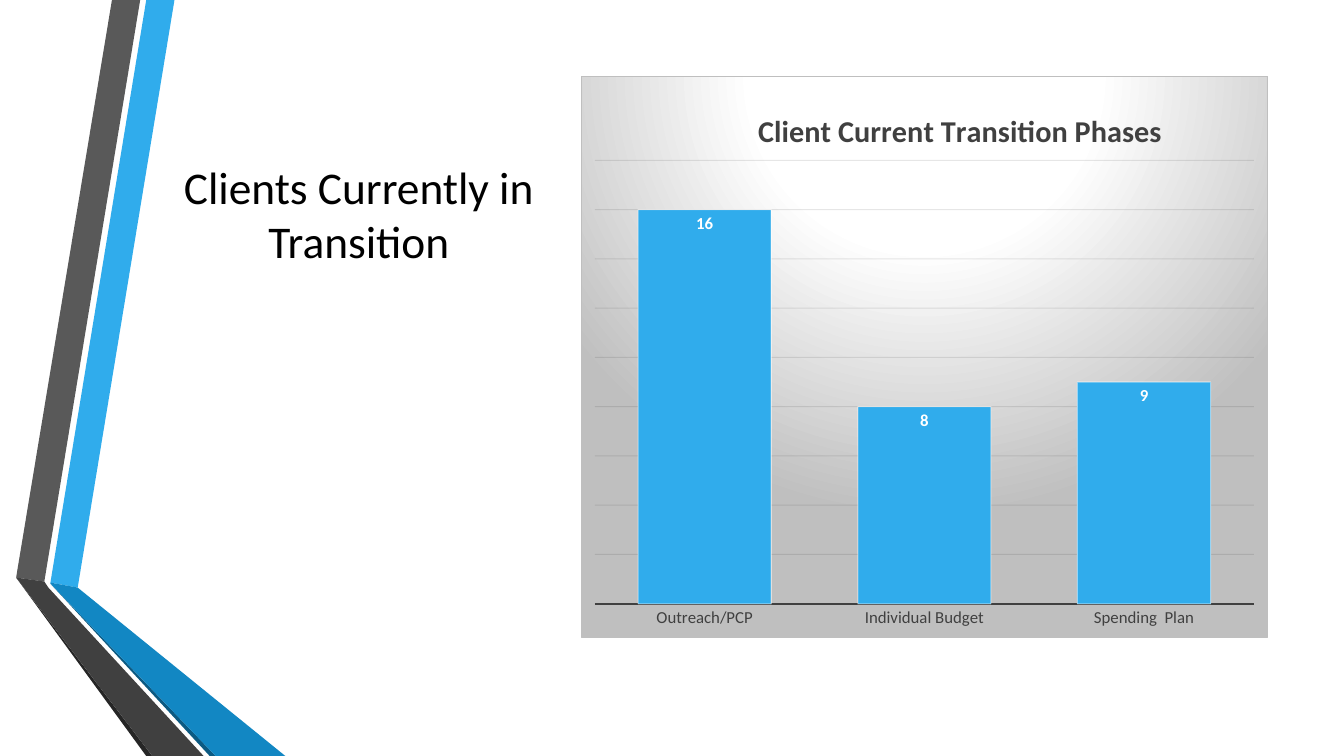
from lxml import etree
from pptx import Presentation
from pptx import util as u
from pptx.chart.data import CategoryChartData
from pptx.dml.color import RGBColor
from pptx.enum import chart as ch, text
from pptx.oxml import parse_xml
from pptx.oxml.ns import nsdecls, qn

COLORS = {
    "black": "000000", "white": "FFFFFF", "silver": "BFBFBF", "grid": "0D0D0D",
    "gray": "595959", "charcoal": "404040", "coal": "262626",
    "sky": "30ACEC", "blue": "1287C3", "navy": "0C5A82",
}
FONT = "Calibri"

# Outlines in percent of the slide's width and height, back to front
RIBBONS = [
    ("sky", [(3.75, 77.07), (5.78, 77.73), (12.98, 0), (10.88, 0)]),
    ("gray", [(10.43, 0), (8.33, 0), (1.2, 76.4), (3.3, 76.93)]),
    ("coal", [(1.2, 76.4), (10.88, 100), (11.33, 100)]),
    ("navy", [(3.75, 77.2), (15.6, 100), (16.05, 100)]),
    ("blue", [(3.75, 77.2), (16.05, 100), (21.23, 100), (5.78, 77.73), (3.75, 77.07)]),
    ("charcoal", [(15.15, 100), (3.6, 77.73), (3.3, 76.93), (1.2, 76.4), (11.33, 100)]),
]
PHASES = {"Outreach/PCP": 16, "Individual Budget": 8, "Spending  Plan": 9}


def rgb(name):
    return RGBColor.from_string(COLORS[name])


def style_font(font, size, color, bold=False):
    font.name, font.size, font.bold = FONT, u.Pt(size), bold
    font.color.rgb = rgb(color)


def write(tf, content, size=12, color="black", bold=False, align=text.PP_ALIGN.CENTER):
    p = tf.paragraphs[0]
    p.alignment = align
    r = p.add_run()
    r.text = content
    style_font(r.font, size, color, bold)


def style_line(line, color, width, alpha=None):
    """Set a solid line; alpha is its opacity in percent."""
    line.color.rgb = rgb(color)
    line.width = u.Pt(width)
    if alpha is not None:
        clr = line.fill._xPr.find(".//" + qn("a:srgbClr"))
        etree.SubElement(clr, qn("a:alpha"), val=str(alpha * 1000))


def place(element, index, inner=False, **shares):
    """Give a chart part a manual layout in shares of the chart."""
    for old in element.findall(qn("c:layout")):
        element.remove(old)
    target = '<c:layoutTarget val="inner"/>' if inner else ""
    modes = "".join(f'<c:{k}Mode val="edge"/>' for k in "xy")
    values = "".join(f'<c:{k} val="{v}"/>' for k, v in shares.items())
    element.insert(index, parse_xml(
        f'<c:layout {nsdecls("c")}><c:manualLayout>{target}{modes}{values}'
        '</c:manualLayout></c:layout>'))


def shade_background(chart):
    """Fill the chart area with a radial gradient and a thin border."""
    stops = "".join(
        f'<a:gs pos="{pos * 1000}"><a:srgbClr val="{COLORS[name]}"/></a:gs>'
        for pos, name in [(0, "white"), (39, "white"), (100, "silver")])
    area = parse_xml(
        f'<c:spPr {nsdecls("c", "a")}><a:gradFill><a:gsLst>{stops}</a:gsLst>'
        '<a:path path="circle"><a:fillToRect l="50000" t="-80000" r="50000" b="180000"/>'
        '</a:path></a:gradFill><a:ln w="9525"><a:solidFill>'
        f'<a:srgbClr val="{COLORS["silver"]}"/></a:solidFill></a:ln></c:spPr>')
    chart._chartSpace.find(qn("c:chart")).addnext(area)


class Deck:
    def __init__(self, width=13.33, height=7.5):
        self.prs = Presentation()
        self.prs.slide_width, self.prs.slide_height = u.Inches(width), u.Inches(height)
        self.s = self.prs.slides.add_slide(self.prs.slide_layouts[5])

    def x(self, percent):
        return round(self.prs.slide_width * percent / 100)

    def y(self, percent):
        return round(self.prs.slide_height * percent / 100)

    def box(self, left, top, width, height):
        return self.x(left), self.y(top), self.x(width), self.y(height)

    def title(self, content, box):
        sp = self.s.shapes.title
        sp.left, sp.top, sp.width, sp.height = self.box(*box)
        tf = sp.text_frame
        tf.word_wrap = True
        tf.auto_size = text.MSO_AUTO_SIZE.NONE
        tf.vertical_anchor = text.MSO_ANCHOR.BOTTOM
        tf.margin_top, tf.margin_bottom = 0, u.Inches(0.59)
        write(tf, content, size=32.4)

    def ribbon(self, color, outline):
        points = [(self.x(px), self.y(py)) for px, py in outline]
        builder = self.s.shapes.build_freeform(*points[0])
        builder.add_line_segments(points[1:], close=True)
        sp = builder.convert_to_shape()
        sp.shadow.inherit = False
        sp.fill.solid()
        sp.fill.fore_color.rgb = rgb(color)
        sp.line.fill.background()

    def columns(self, heading, values, box):
        data = CategoryChartData()
        data.categories = list(values)
        data.add_series("Series 1", list(values.values()))
        chart = self.s.shapes.add_chart(
            ch.XL_CHART_TYPE.COLUMN_CLUSTERED, *self.box(*box), data).chart
        style_font(chart.font, 10, "black")
        chart.has_legend = False
        shade_background(chart)

        chart.has_title = True
        write(chart.chart_title.text_frame, heading, size=21.6, color="charcoal", bold=True)
        place(chart.chart_title._element, 1, x=0.25, y=0.05)
        place(chart._chartSpace.chart.plotArea, 0, inner=True, x=0.02, y=0.15, w=0.96, h=0.79)

        axis = chart.category_axis
        axis.major_tick_mark = ch.XL_TICK_MARK.NONE
        style_font(axis.tick_labels.font, 12, "charcoal")
        style_line(axis.format.line, "charcoal", 1.5)
        scale = chart.value_axis
        scale.minimum_scale, scale.maximum_scale, scale.major_unit = 0, 18, 2
        scale.visible = False
        scale.has_major_gridlines = True
        style_line(scale.major_gridlines.format.line, "grid", 0.75, alpha=10)

        plot = chart.plots[0]
        plot.gap_width, plot.vary_by_categories = 65, False
        series = plot.series[0]
        series.format.fill.solid()
        series.format.fill.fore_color.rgb = rgb("sky")
        style_line(series.format.line, "white", 0.75, alpha=50)
        labels = series.data_labels
        labels.show_value = True
        labels.position = ch.XL_LABEL_POSITION.INSIDE_END
        style_font(labels.font, 12, "white", bold=True)


def main():
    deck = Deck()
    for color, outline in RIBBONS:
        deck.ribbon(color, outline)
    deck.title("Clients Currently in Transition", (12.15, 23.33, 29.1, 20))
    deck.columns("Client Current Transition Phases", PHASES, (43.2, 10, 51.16, 74.4))
    deck.prs.save("out.pptx")


if __name__ == "__main__":
    main()
